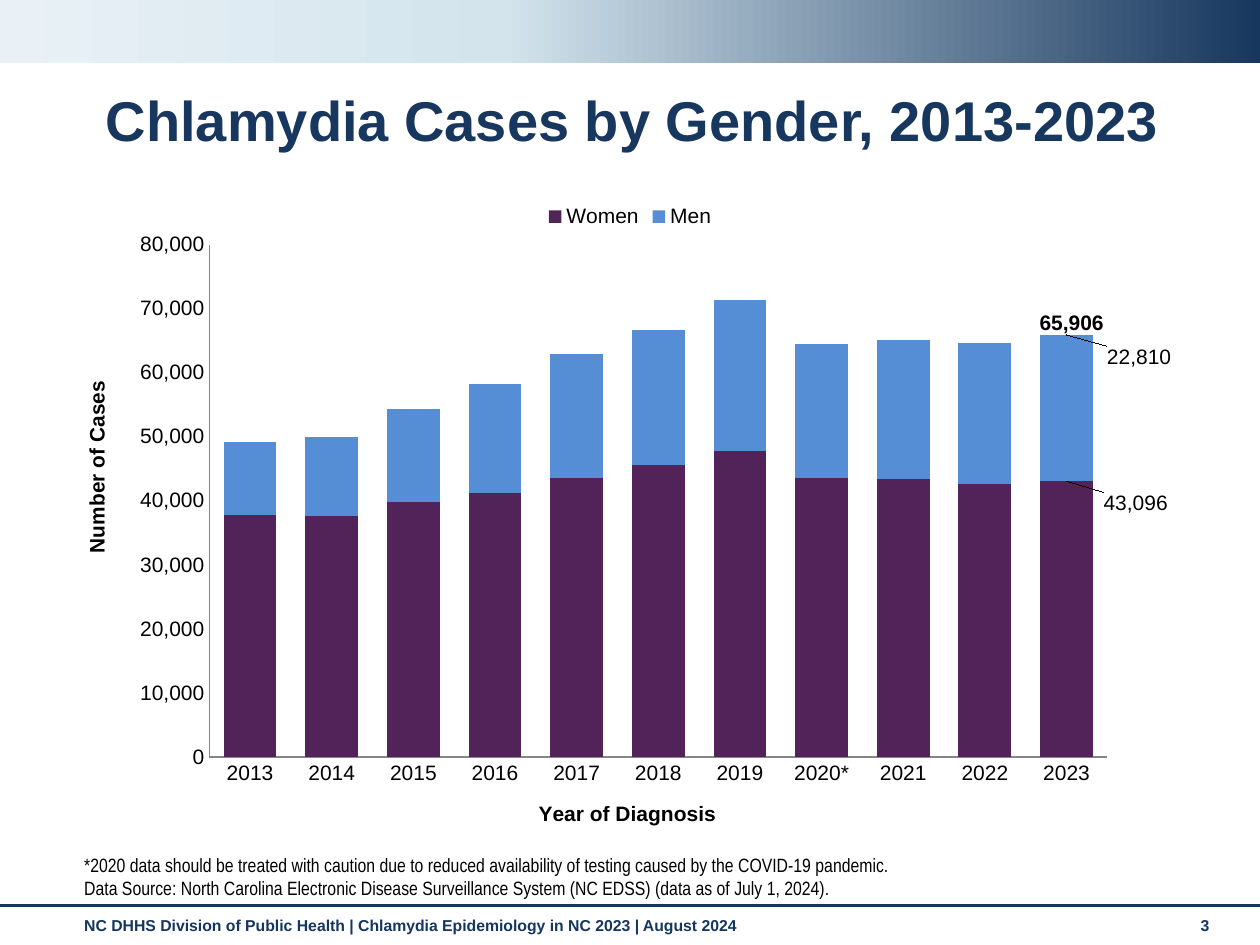
from copy import deepcopy

from pptx import Presentation
from pptx.chart.data import CategoryChartData
from pptx.dml.color import RGBColor
from pptx.enum import chart as charts, shapes, text
from pptx.oxml import parse_xml
from pptx.oxml.ns import nsdecls, qn
from pptx.util import Inches, Pt

NAVY, BLACK, GRAY = "17375E", "000000", "868686"
FOOTER_NAVY = "15365E"
YEARS = ["2013", "2014", "2015", "2016", "2017", "2018", "2019", "2020*", "2021", "2022", "2023"]
SERIES = [
    ("Women", "522358", (0.061, 0.01),
     [37713, 37584, 39798, 41209, 43627, 45558, 47835, 43620, 43413, 42692, 43096]),
    ("Men", "558ED5", (0.064, 0.01),
     [11497, 12388, 14590, 16963, 19330, 21154, 23546, 20874, 21740, 21978, 22810]),
]
NOTES = [
    "*2020 data should be treated with caution due to reduced availability of testing "
    "caused by the COVID-19 pandemic.",
    "Data Source: North Carolina Electronic Disease Surveillance System (NC EDSS) "
    "(data as of July 1, 2024).",
]


def color(value):
    """Turn a hex string into a colour."""
    return RGBColor.from_string(value)


def style_font(font, size, fill, bold=False, name="Arial"):
    """Set the face, size, weight and colour of a font."""
    font.name, font.size, font.bold = name, Pt(size), bold
    font.color.rgb = color(fill)


def write(frame, lines, size, fill, bold=False, name="Arial", align=text.PP_ALIGN.LEFT):
    """Write each line as a paragraph of one styled run."""
    frame.word_wrap = True
    for index, line in enumerate(lines):
        paragraph = frame.add_paragraph() if index else frame.paragraphs[0]
        paragraph.alignment = align
        run = paragraph.add_run()
        run.text = line
        style_font(run.font, size, fill, bold, name)


def add_text(slide, box, lines, *style, anchor=text.MSO_ANCHOR.TOP, **options):
    """Add a text box at the given box in inches."""
    frame = slide.shapes.add_textbox(*map(Inches, box)).text_frame
    frame.vertical_anchor = anchor
    write(frame, lines, *style, **options)


def add_banner(slide, box):
    """Add the gradient band across the top."""
    banner = slide.shapes.add_shape(shapes.MSO_SHAPE.RECTANGLE, *map(Inches, box))
    banner.shadow.inherit = False
    banner.line.fill.background()
    banner.fill.gradient()
    banner.fill.gradient_angle = 180
    stop_list = banner._element.spPr.find(qn("a:gradFill")).find(qn("a:gsLst"))
    stop_list.append(deepcopy(stop_list[-1]))
    stops = [(0, NAVY), (0.6, "D3E4ED"), (1, "E9F1F6")]
    for stop, (position, fill) in zip(banner.fill.gradient_stops, stops):
        stop.position = position
        stop.color.rgb = color(fill)


def add_footer(slide, box):
    """Add the rule, the footer line and the page number."""
    left, top, width, height = box
    rule = slide.shapes.add_connector(
        shapes.MSO_CONNECTOR.STRAIGHT, Inches(left), Inches(top), Inches(left + width), Inches(top))
    rule.line.color.rgb = color(NAVY)
    rule.line.width = Pt(1.75)
    rule._element.spPr.append(parse_xml(f"<a:effectLst {nsdecls('a')}/>"))
    footer = "NC DHHS Division of Public Health | Chlamydia Epidemiology in NC 2023 | August 2024"
    for offset, span, line in [(0.57, 8.74, footer), (9.43, 0.44, "3")]:
        add_text(slide, (left + offset, top + 0.03, span, height - 0.03), [line], 9, FOOTER_NAVY, True)


def set_title(slide, box, line):
    """Place and format the title placeholder."""
    title = slide.shapes.title
    title.left, title.top, title.width, title.height = map(Inches, box)
    frame = title.text_frame
    frame.auto_size = text.MSO_AUTO_SIZE.NONE
    frame.vertical_anchor = text.MSO_ANCHOR.MIDDLE
    write(frame, [line], 32, NAVY, True)
    frame.paragraphs[0].line_spacing = 0.9


def set_layout(element, index, **values):
    """Give a chart element a manual layout as shares of the chart."""
    for old in element.findall(qn("c:layout")):
        element.remove(old)
    items = "".join(f'<c:{key} val="{value}"/>' for key, value in values.items())
    element.insert(index, parse_xml(
        f"<c:layout {nsdecls('c')}><c:manualLayout>{items}</c:manualLayout></c:layout>"))


def format_axis(axis, title, x, y, rotation):
    """Format an axis and place its title."""
    axis.has_major_gridlines = False
    axis.major_tick_mark = axis.minor_tick_mark = charts.XL_TICK_MARK.NONE
    axis.format.line.color.rgb = color(GRAY)
    axis.format.line.width = Pt(0.75)
    style_font(axis.tick_labels.font, 12, BLACK)
    frame = axis.axis_title.text_frame
    write(frame, [title], 12, BLACK, True, align=text.PP_ALIGN.CENTER)
    frame._txBody.bodyPr.set("rot", str(rotation * 60000))
    set_layout(axis.axis_title._element, 1, xMode="edge", yMode="edge", x=x, y=y)


def add_case_chart(slide, box):
    """Add the stacked columns of cases by gender."""
    data = CategoryChartData(number_format="#,##0")
    data.categories = YEARS
    for name, _, _, values in SERIES:
        data.add_series(name, values)
    chart = slide.shapes.add_chart(
        charts.XL_CHART_TYPE.COLUMN_STACKED, *map(Inches, box), data).chart
    style_font(chart.font, 12, BLACK)
    chart.has_title = False
    chart.has_legend = True
    chart.legend.position = charts.XL_LEGEND_POSITION.TOP
    chart.legend.include_in_layout = False
    style_font(chart.legend.font, 12, BLACK)
    format_axis(chart.category_axis, "Year of Diagnosis", 0.416, 0.955, 0)
    format_axis(chart.value_axis, "Number of Cases", 0.015, 0.295, -90)
    axis = chart.value_axis
    axis.minimum_scale, axis.maximum_scale, axis.major_unit = 0, 80000, 10000
    axis.tick_labels.number_format = "#,##0"
    axis.tick_labels.number_format_is_linked = False
    plot = chart.plots[0]
    plot.gap_width, plot.overlap, plot.vary_by_categories = 55, 100, False
    set_layout(chart._chartSpace.chart.plotArea, 0, layoutTarget="inner", xMode="edge",
               yMode="edge", x=0.129, y=0.084, w=0.792, h=0.808)
    for series, (_, fill, (x, y), values) in zip(plot.series, SERIES):
        series.format.fill.solid()
        series.format.fill.fore_color.rgb = color(fill)
        series.data_labels.show_value = False
        label = series.points[len(values) - 1].data_label
        style_font(label.font, 12, BLACK)
        label.position = charts.XL_LABEL_POSITION.INSIDE_END
        set_layout(series._element.xpath("c:dLbls/c:dLbl")[0], 1, x=x, y=y)


def main():
    """Build the slide and save it."""
    presentation = Presentation()
    presentation.slide_width, presentation.slide_height = Inches(10), Inches(7.5)
    slide = presentation.slides.add_slide(presentation.slide_layouts[5])
    add_footer(slide, (0, 7.19, 10, 0.31))
    add_banner(slide, (0, 0, 10, 0.5))
    set_title(slide, (0.74, 0.68, 8.76, 0.6), "Chlamydia Cases by Gender, 2013-2023")
    add_text(slide, (0.57, 6.83, 8.74, 0.36), NOTES, 11, BLACK,
             name="Arial Narrow", anchor=text.MSO_ANCHOR.BOTTOM)
    add_case_chart(slide, (0.5, 1.52, 9, 5.08))
    add_text(slide, (8.05, 2.41, 0.91, 0.3), ["65,906"], 12, BLACK, True,
             align=text.PP_ALIGN.CENTER)


    presentation.save("out.pptx")


if __name__ == "__main__":
    main()
